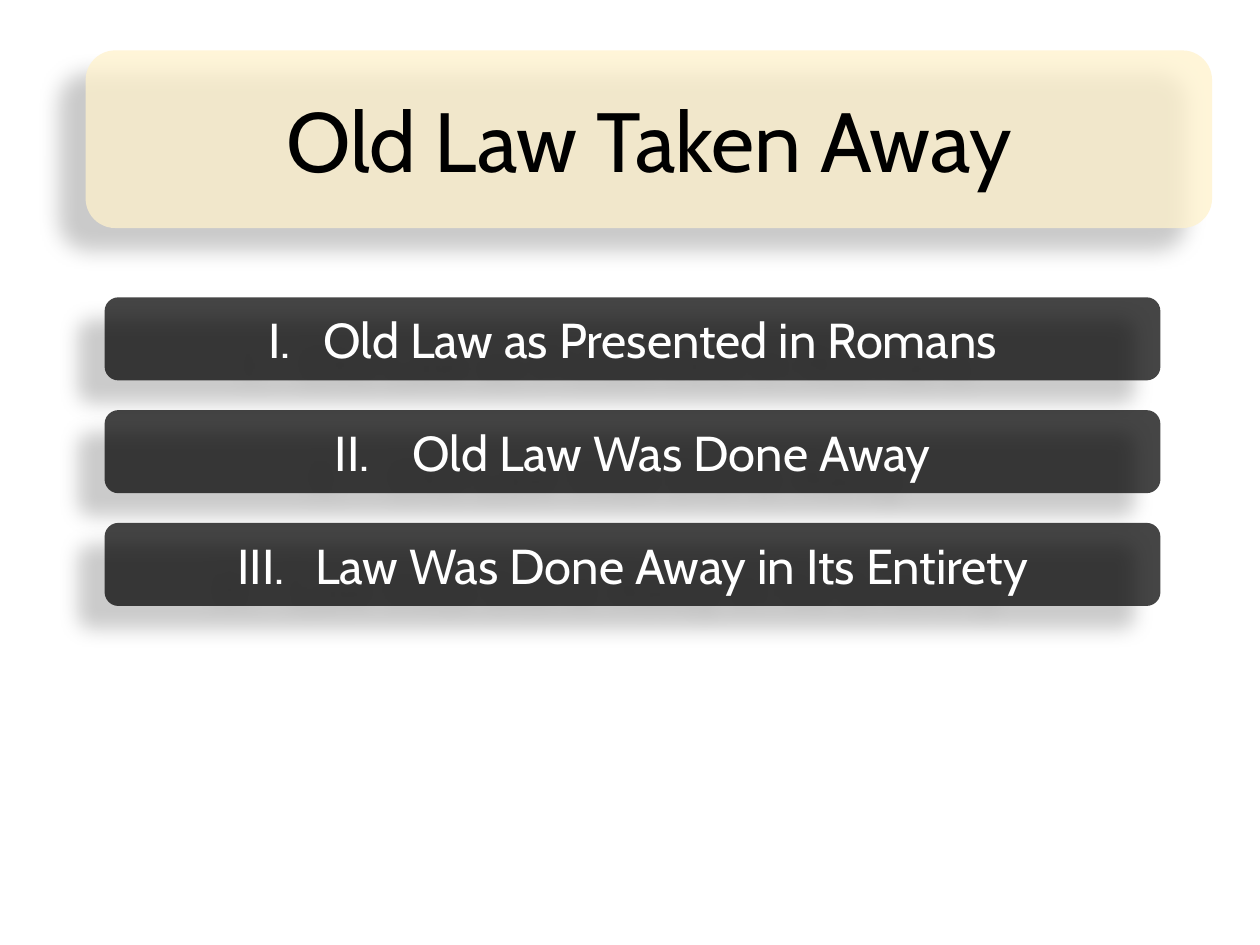
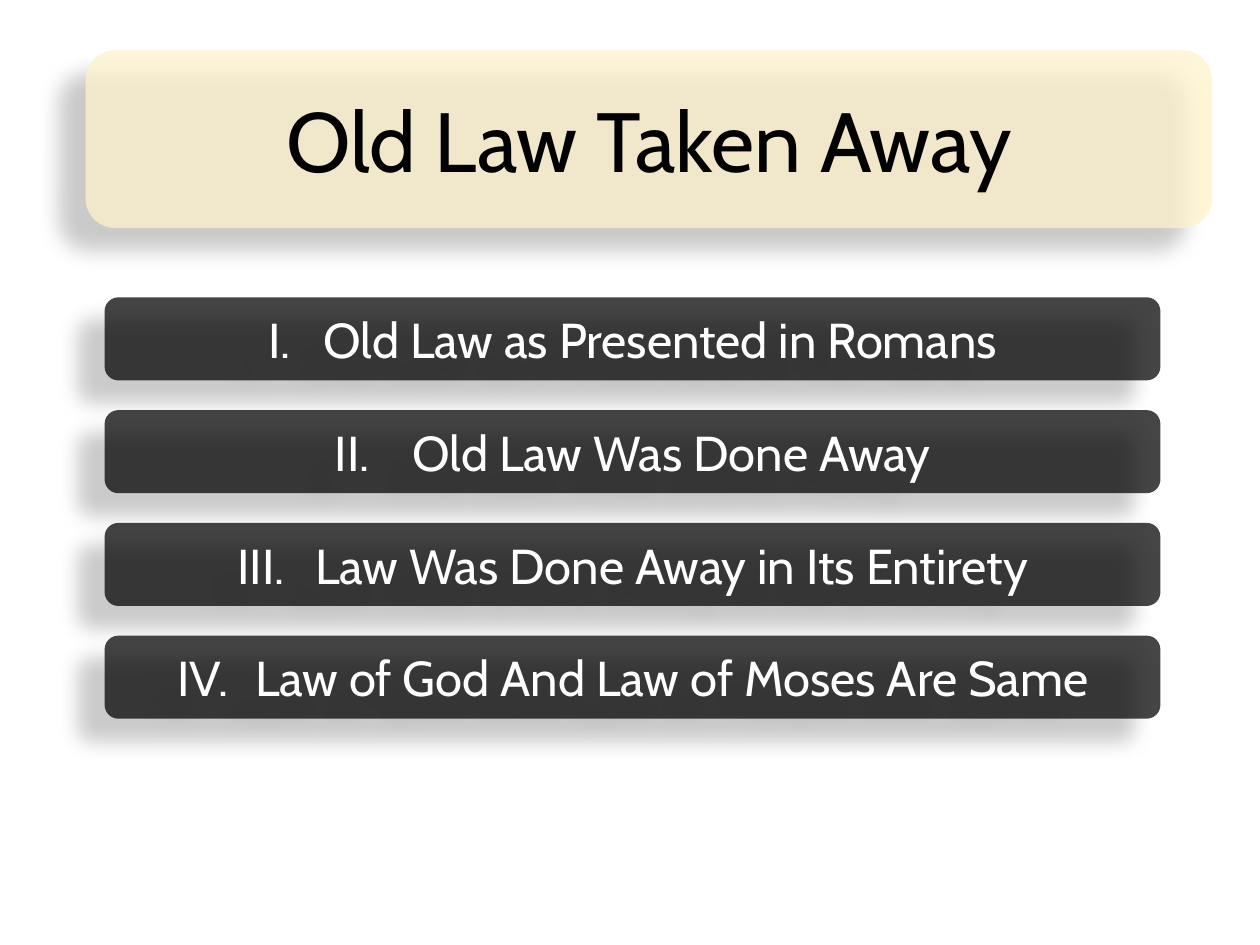
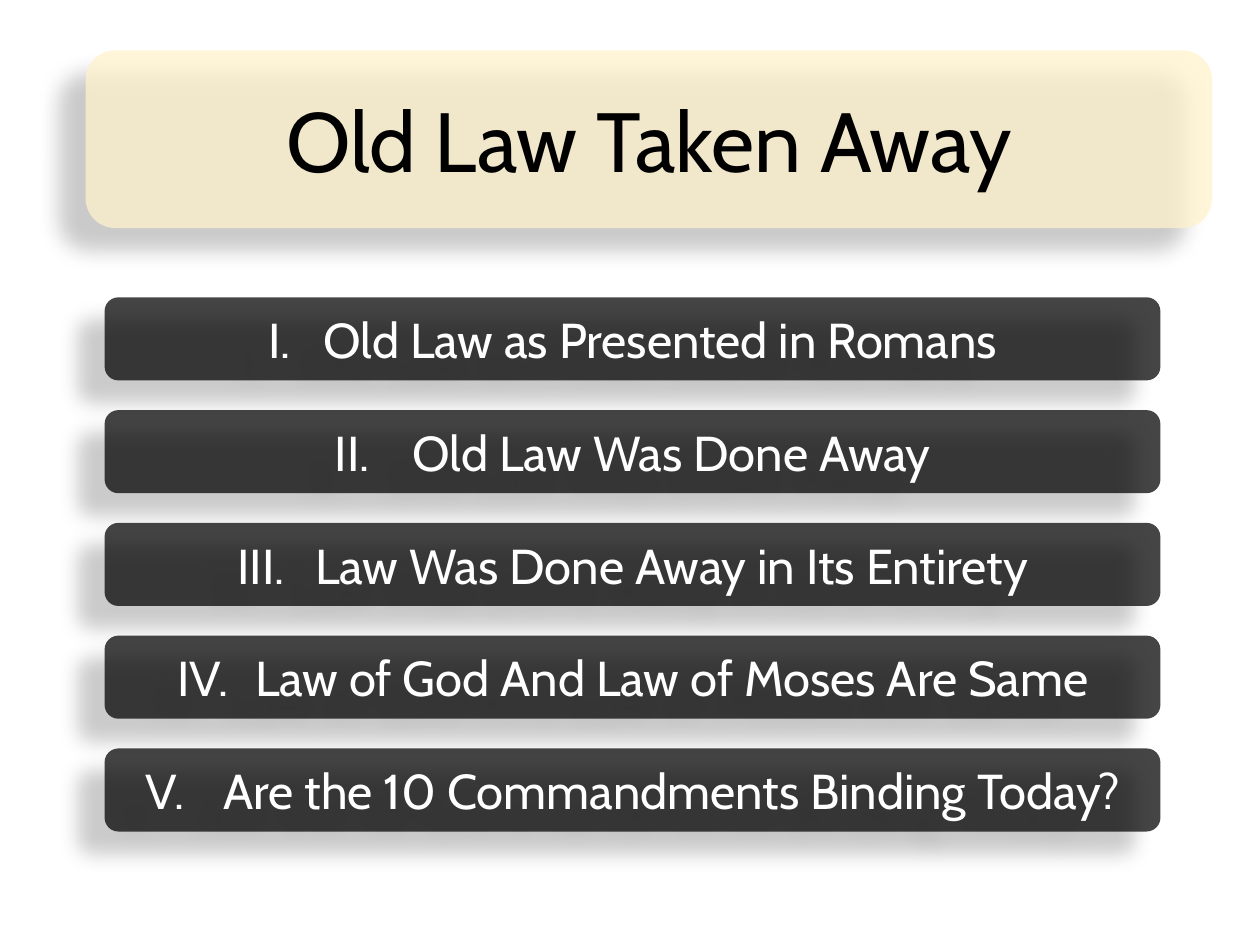
"""Build three slides that reveal the outline of a lesson bar by bar."""
from dataclasses import dataclass

from lxml.etree import SubElement
from pptx import Presentation
from pptx.dml.color import RGBColor
from pptx.enum.shapes import MSO_SHAPE
from pptx.enum.text import MSO_ANCHOR, MSO_AUTO_SIZE, PP_ALIGN
from pptx.oxml.ns import qn
from pptx.shapes.autoshape import Shape
from pptx.slide import Slide
from pptx.text.text import TextFrame
from pptx.util import Inches, Pt


@dataclass(frozen=True)
class Theme:
    font: str = "Cabin"
    cream: str = "FFF2CC"
    black: str = "000000"
    white: str = "FFFFFF"
    head: int = 48
    body: int = 28


@dataclass(frozen=True)
class Box:
    left: float
    top: float
    width: float
    height: float

    def place(self) -> tuple:
        return tuple(map(Inches, (self.left, self.top, self.width, self.height)))


@dataclass(frozen=True)
class Point:
    text: str
    indent: float = 0.62


THEME = Theme()
TITLE = "Old Law Taken Away"
BAND = Box(0.68, 0.4, 8.94, 1.41)
FIRST, LAST = 2.36, 5.94
POINTS = (
    Point("Old Law as Presented in Romans", 0.44),
    Point("Old Law Was Done Away"),
    Point("Law Was Done Away in Its Entirety"),
    Point("Law of God And Law of Moses Are Same"),
    Point("Are the 10 Commandments Binding Today?"),
)
SHOWN = (3, 4, 5)


def add_alpha(color, percent: int) -> None:
    SubElement(color, qn("a:alpha"), val=str(percent * 1000))


def add_panel(slide: Slide, box: Box, color: str, alpha: int) -> Shape:
    panel = slide.shapes.add_shape(MSO_SHAPE.ROUNDED_RECTANGLE, *box.place())
    panel.fill.solid()
    panel.fill.fore_color.rgb = RGBColor.from_string(color)
    panel.line.fill.background()
    panel.shadow.inherit = False
    props = panel.element.spPr
    add_alpha(props.find(qn("a:solidFill")).find(qn("a:srgbClr")), alpha)
    shadow = SubElement(
        props.find(qn("a:effectLst")), qn("a:outerShdw"),
        blurRad=str(Pt(11.8)), dist=str(Pt(19.7)), dir=str(141 * 60000),
        algn="tl", rotWithShape="0",
    )
    add_alpha(SubElement(shadow, qn("a:srgbClr"), val=THEME.black), 28)
    return panel


def write(frame: TextFrame, text: str, *, size: int, color: str,
          number: int = 0, indent: float = 0) -> None:
    frame.word_wrap = True
    frame.auto_size = MSO_AUTO_SIZE.NONE
    frame.vertical_anchor = MSO_ANCHOR.MIDDLE
    line = frame.paragraphs[0]
    line.alignment = PP_ALIGN.CENTER
    if number:
        props = line._p.get_or_add_pPr()
        props.set("marL", str(Inches(indent)))
        props.set("indent", str(-Inches(indent)))
        SubElement(props, qn("a:buAutoNum"), type="romanUcPeriod", startAt=str(number))
    run = line.add_run()
    run.text = text
    run.font.name = THEME.font
    run.font.size = Pt(size)
    run.font.color.rgb = RGBColor.from_string(color)


def add_title(slide: Slide) -> None:
    add_panel(slide, BAND, THEME.cream, 75)
    title = slide.shapes.title
    title.left, title.top, title.width, title.height = BAND.place()
    slide.shapes._spTree.append(title.element)
    write(title.text_frame, TITLE, size=THEME.head, color=THEME.black)


def add_bar(slide: Slide, index: int, point: Point) -> None:
    step = (LAST - FIRST) / (len(POINTS) - 1)
    box = Box(0.83, FIRST + index * step, 8.38, 0.66)
    bar = add_panel(slide, box, THEME.black, 73)
    write(bar.text_frame, point.text, size=THEME.body, color=THEME.white,
          number=index + 1, indent=point.indent)


def main() -> None:
    deck = Presentation()
    deck.slide_width, deck.slide_height = Inches(10), Inches(7.5)
    layout = deck.slide_layouts.get_by_name("Title Only")
    for count in SHOWN:
        slide = deck.slides.add_slide(layout)
        add_title(slide)
        for index, point in enumerate(POINTS[:count]):
            add_bar(slide, index, point)
    deck.save("out.pptx")


if __name__ == "__main__":
    main()
